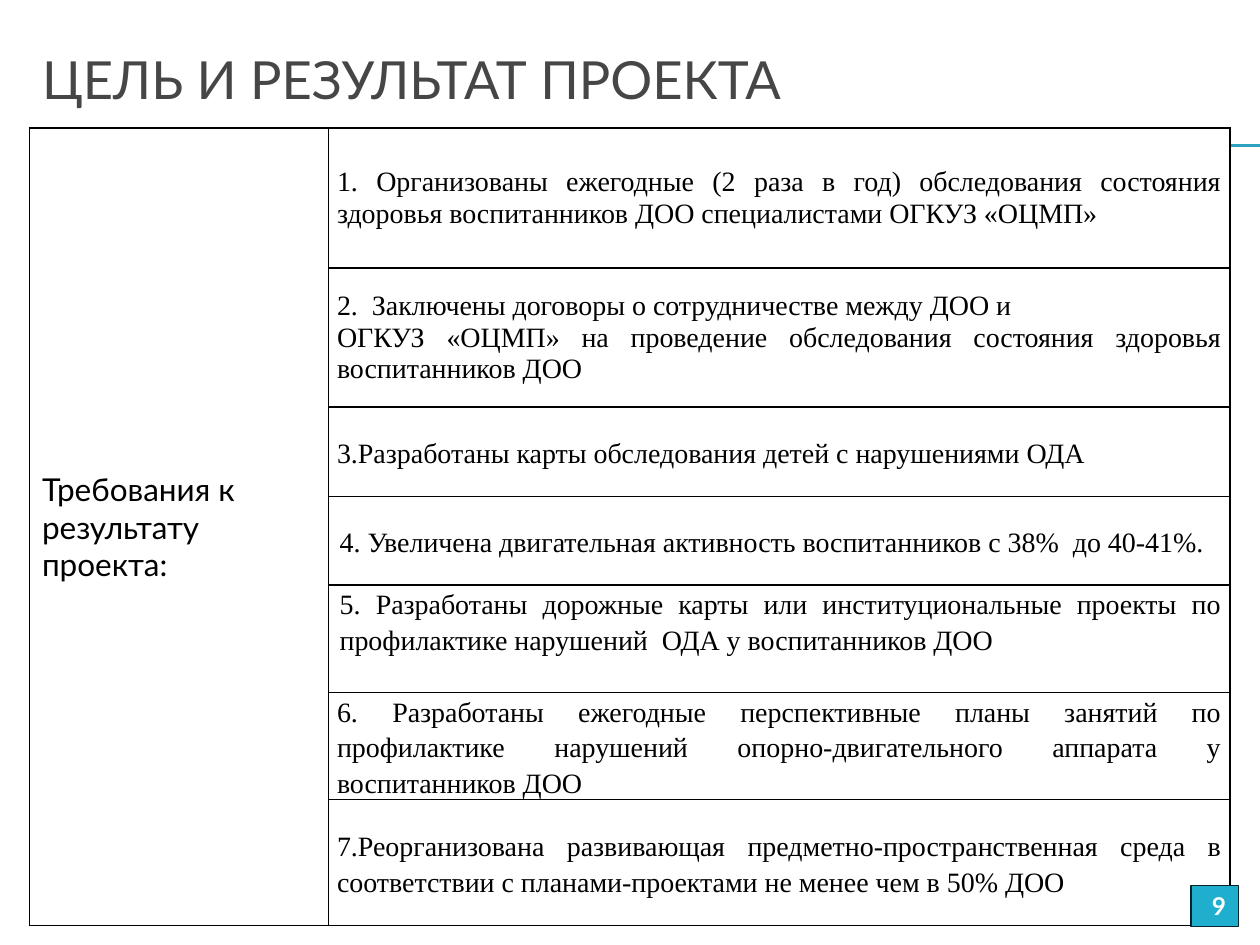
from lxml.etree import SubElement
from pptx import Presentation
from pptx.dml.color import RGBColor
from pptx.enum.shapes import MSO_CONNECTOR as CONN, MSO_SHAPE as SHAPE
from pptx.enum.text import MSO_ANCHOR as ANCHOR, PP_ALIGN as ALIGN
from pptx.oxml.ns import qn
from pptx.util import Pt

TITLE = "ЦЕЛЬ И РЕЗУЛЬТАТ ПРОЕКТА"
HEADING = "Требования к результату проекта:"
SERIF = "Times New Roman"
REQUIREMENTS = [
    dict(height=80, lines=["1. Организованы ежегодные (2 раза в год) обследования состояния здоровья "
                           "воспитанников ДОО специалистами ОГКУЗ «ОЦМП»"]),
    dict(height=79.5, lines=["2.  Заключены договоры о сотрудничестве между ДОО и",
                             "ОГКУЗ «ОЦМП» на проведение обследования состояния здоровья воспитанников ДОО"]),
    dict(height=51, spacing=1.15, lines=["3.Разработаны карты обследования детей с нарушениями ОДА"]),
    dict(height=50.5, spacing=1.15, indent=1.5,
         lines=["4. Увеличена двигательная активность воспитанников с 38%  до 40-41%."]),
    dict(height=61.5, spacing=1.15, indent=1.5, anchor=ANCHOR.TOP,
         lines=["5. Разработаны дорожные карты или институциональные проекты по профилактике "
                "нарушений  ОДА у воспитанников ДОО"]),
    dict(height=61, spacing=1.15, anchor=ANCHOR.TOP,
         lines=["6. Разработаны ежегодные перспективные планы занятий по профилактике "
                "нарушений опорно-двигательного аппарата у воспитанников ДОО"]),
    dict(height=72, spacing=1.15,
         lines=["7.Реорганизована развивающая предметно-пространственная среда в соответствии "
                "с планами-проектами не менее чем в 50% ДОО"]),
]
COLUMNS = [170.8, 515.4]
TABLE_LEFT, TABLE_TOP = 16.8, 73.2


def color(value):
    return RGBColor.from_string(value)


def write(tf, lines, size=16, font="Lato", fill="000000", bold=False,
          align=ALIGN.LEFT, spacing=1.0, indent=0):
    tf.word_wrap = True
    for i, line in enumerate(lines):
        p = tf.add_paragraph() if i else tf.paragraphs[0]
        p.alignment, p.line_spacing = align, spacing
        if indent:
            p._p.get_or_add_pPr().set("marL", str(Pt(indent)))
        r = p.add_run()
        r.text = line
        r.font.size, r.font.name, r.font.bold = Pt(size), font, bold
        r.font.color.rgb = color(fill)


def style_cell(cell, inset_x, inset_y, anchor=ANCHOR.MIDDLE):
    cell.margin_left = cell.margin_right = Pt(inset_x)
    cell.margin_top = cell.margin_bottom = Pt(inset_y)
    cell.vertical_anchor = anchor
    props = cell._tc.get_or_add_tcPr()
    for side in ("lnL", "lnR", "lnT", "lnB"):
        ln = SubElement(props, qn(f"a:{side}"), w=str(Pt(1)))
        SubElement(SubElement(ln, qn("a:solidFill")), qn("a:srgbClr"), val="000000")
    cell.fill.solid()
    cell.fill.fore_color.rgb = color("FFFFFF")


def add_rule(slide, y):
    line = slide.shapes.add_connector(CONN.STRAIGHT, Pt(40.3), Pt(y), Pt(720), Pt(y))
    line.line.color.rgb = color("2DA2BF")
    line.line.width = Pt(0.75)
    SubElement(line._element.spPr, qn("a:effectLst"))


def add_requirements(slide):
    heights = [item["height"] for item in REQUIREMENTS]
    frame = slide.shapes.add_table(len(heights), len(COLUMNS), Pt(TABLE_LEFT), Pt(TABLE_TOP),
                                   Pt(sum(COLUMNS)), Pt(sum(heights)))
    table = frame.table
    for col, width in zip(table.columns, COLUMNS):
        col.width = Pt(width)
    for i, item in enumerate(REQUIREMENTS):
        table.rows[i].height = Pt(item["height"])
        style_cell(table.cell(i, 0), 7.2, 3.6)
        cell = table.cell(i, 1)
        style_cell(cell, 5, 0, item.get("anchor", ANCHOR.MIDDLE))
        write(cell.text_frame, item["lines"], font=SERIF, align=ALIGN.JUSTIFY,
              spacing=item.get("spacing", 1.0), indent=item.get("indent", 0))
    heading = table.cell(0, 0)
    heading.merge(table.cell(len(heights) - 1, 0))
    write(heading.text_frame, [HEADING], size=18)


def add_page_number(slide):
    sp = slide.shapes.add_shape(SHAPE.RECTANGLE, Pt(680.6), Pt(506), Pt(27.2), Pt(23.4))
    sp.shadow.inherit = False
    sp.fill.solid()
    sp.fill.fore_color.rgb = color("1FAECD")
    sp.line.color.rgb = color("062329")
    sp.line.width = Pt(0.75)
    tf = sp.text_frame
    tf.vertical_anchor = ANCHOR.MIDDLE
    write(tf, ["9"], size=14, fill="FFFFFF", bold=True, align=ALIGN.RIGHT)


def main():
    """Build the slide with the project goal and its required results."""
    prs = Presentation()
    prs.slide_width, prs.slide_height = Pt(720), Pt(540)
    slide = prs.slides.add_slide(prs.slide_layouts[5])
    title = slide.shapes.title
    title.left, title.top, title.width, title.height = Pt(16.8), Pt(11.5), Pt(684), Pt(66.2)
    title.text_frame.vertical_anchor = ANCHOR.MIDDLE
    write(title.text_frame, [TITLE], size=30, fill="464646")
    for y in (82.8, 83.5):
        add_rule(slide, y)
    add_requirements(slide)
    add_page_number(slide)
    prs.save("out.pptx")


if __name__ == "__main__":
    main()
